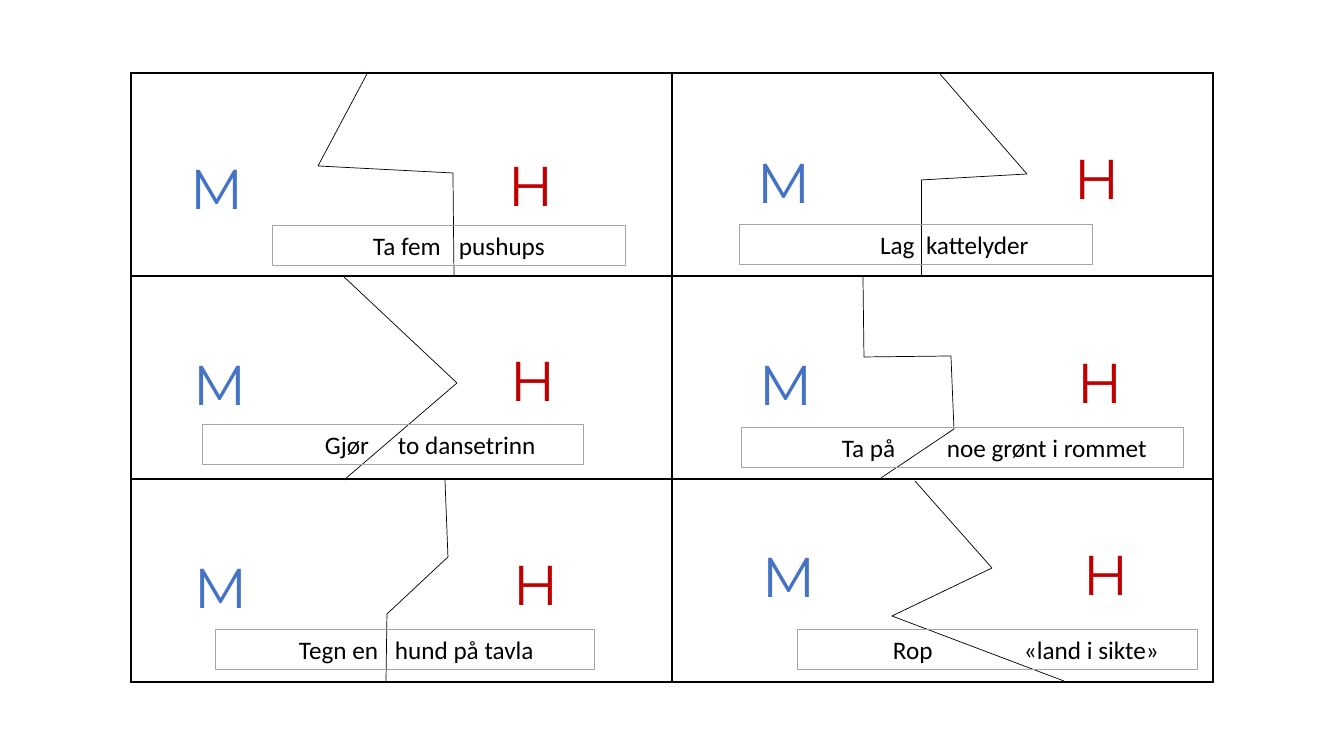
import itertools

import lxml.etree
import pptx
import pptx.dml.color
import pptx.enum.shapes
import pptx.enum.text
import pptx.oxml.ns
import pptx.util

PX = 914400 / 100.8
COLUMNS, ROWS = 2, 3
GRID_LEFT, GRID_TOP = 131, 73
CARD_WIDTH, CARD_HEIGHT = 541, 203
COLORS = {"ink": "000000", "frame": "A5A5A5", "M": "4472C4", "H": "C00000"}

# Positions are px from the card's corner; a caption is left, top, width, text inset, tab stop.
CARDS = [
    {"tear": [(237, -1), (187, 93), (322, 100), (323, 203)], "M": (49, 76), "H": (367, 73),
     "caption": (141, 152, 353, 101, 86), "words": ("Ta fem", "pushups")},
    {"tear": [(268, 1), (355, 101), (249, 107), (249, 202)], "M": (75, 70), "H": (392, 66),
     "caption": (67, 151, 353, 141, 46), "words": ("Lag", "kattelyder")},
    {"tear": [(212, 0), (326, 107), (213, 204)], "M": (52, 69), "H": (369, 65),
     "caption": (71, 148, 381, 123, 73), "words": ("Gjør", "to dansetrinn")},
    {"tear": [(191, 1), (192, 81), (279, 80), (282, 153), (209, 202)], "M": (77, 69), "H": (395, 67),
     "caption": (69, 151, 442, 101, 105), "words": ("Ta på", "noe grønt i rommet")},
    {"tear": [(314, 1), (317, 78), (256, 135), (255, 204)], "M": (53, 69), "H": (372, 66),
     "caption": (84, 150, 379, 84, 96), "words": ("Tegn en", "hund på tavla")},
    {"tear": [(243, 2), (320, 89), (220, 137), (392, 202)], "M": (80, 58), "H": (401, 56),
     "caption": (125, 150, 400, 96, 131), "words": ("Rop", "«land i sikte»")},
]


def px(*lengths):
    """Turn px lengths into a list of EMU."""
    return [pptx.util.Emu(round(length * PX)) for length in lengths]


def color(name):
    """Return a palette colour."""
    return pptx.dml.color.RGBColor.from_string(COLORS[name])


def add_node(parent, tag, **attributes):
    """Append a DrawingML element."""
    return lxml.etree.SubElement(parent, pptx.oxml.ns.qn(tag), attributes)


def style_text(frame, text, font_name, size, color_name):
    """Write one left-aligned paragraph in a single style."""
    frame.word_wrap = True
    para = frame.paragraphs[0]
    para.text = text
    para.alignment = pptx.enum.text.PP_ALIGN.LEFT
    para.font.name = font_name
    para.font.size = pptx.util.Pt(size)
    para.font.color.rgb = color(color_name)
    return para


def draw_grid(page, left, top, width, height):
    """Draw the empty bordered table behind the cards."""
    table = page.shapes.add_table(ROWS, COLUMNS, *px(left, top, width, height)).table
    table.first_row = table.horz_banding = False
    for column in table.columns:
        column.width = px(width // COLUMNS)[0]
    for row in table.rows:
        row.height = px(height // ROWS)[0]
    for cell in table.iter_cells():
        properties = cell._tc.get_or_add_tcPr()
        for side in ("a:lnL", "a:lnR", "a:lnT", "a:lnB"):
            border = add_node(properties, side, w="12700")
            add_node(add_node(border, "a:solidFill"), "a:srgbClr", val=COLORS["ink"])
        cell.fill.background()


def draw_tear(page, left, top, points):
    """Join the points of a tear line."""
    for (x1, y1), (x2, y2) in itertools.pairwise(points):
        line = page.shapes.add_connector(
            pptx.enum.shapes.MSO_CONNECTOR.STRAIGHT,
            *px(left + x1, top + y1, left + x2, top + y2))
        line.line.color.rgb = color("ink")
        line.line.width = pptx.util.Pt(0.5)
        add_node(line._element.spPr, "a:effectLst")


def draw_letter(page, left, top, width, letter):
    """Draw a large coloured letter."""
    box = page.shapes.add_textbox(*px(left, top, width, 78))
    style_text(box.text_frame, letter, "Montserrat", 40, letter)


def draw_caption(page, left, top, width, inset, tab, words):
    """Draw a framed caption whose two halves are parted by a tab stop."""
    box = page.shapes.add_shape(
        pptx.enum.shapes.MSO_SHAPE.RECTANGLE, *px(left, top, width, 40))
    box.shadow.inherit = False
    box.fill.background()
    box.line.color.rgb = color("frame")
    box.line.width = pptx.util.Pt(0.5)
    box.text_frame.margin_left, box.text_frame.margin_right = px(inset, 0)
    para = style_text(box.text_frame, "\t".join(words), "Calibri", 18, "ink")
    properties = para._p.get_or_add_pPr()
    tabs = lxml.etree.Element(pptx.oxml.ns.qn("a:tabLst"))
    properties.insert_element_before(tabs, "a:defRPr", "a:extLst")
    add_node(tabs, "a:tab", pos=str(px(tab)[0]), algn="l")


def draw_card(page, left, top, card):
    """Draw one card from its top left corner."""
    draw_tear(page, left, top, card["tear"])
    for letter, width in (("M", 121), ("H", 90)):
        x, y = card[letter]
        draw_letter(page, left + x, top + y, width, letter)
    x, y, width, inset, tab = card["caption"]
    draw_caption(page, left + x, top + y, width, inset, tab, card["words"])


def main():
    """Build and save the deck."""
    deck = pptx.Presentation()
    deck.slide_width, deck.slide_height = px(1344, 756)
    page = deck.slides.add_slide(deck.slide_layouts[6])
    draw_grid(page, GRID_LEFT, GRID_TOP, COLUMNS * CARD_WIDTH, ROWS * CARD_HEIGHT)
    for index, card in enumerate(CARDS):
        row, column = divmod(index, COLUMNS)
        draw_card(page, GRID_LEFT + column * CARD_WIDTH, GRID_TOP + row * CARD_HEIGHT, card)
    deck.save("out.pptx")


if __name__ == "__main__":
    main()
